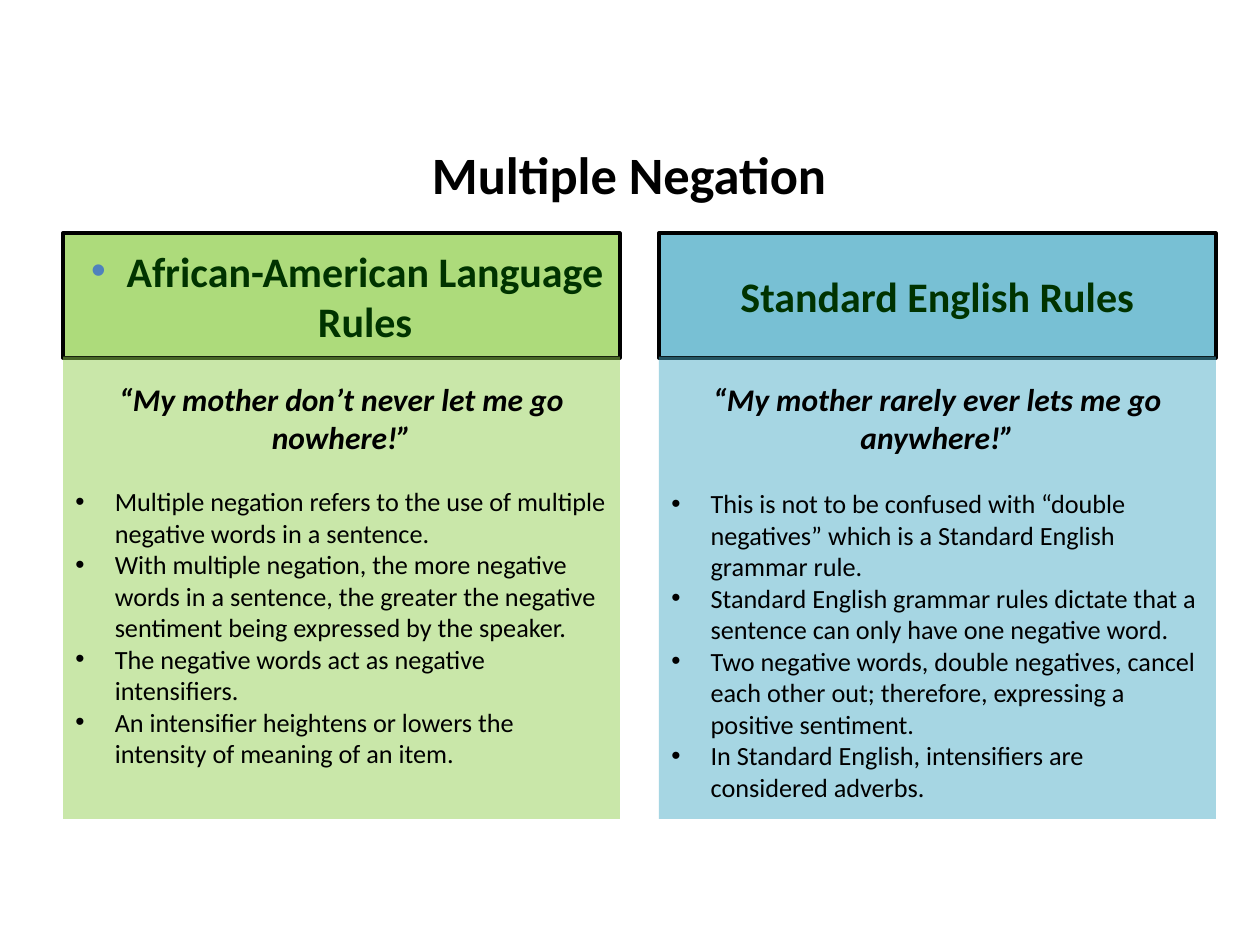
from dataclasses import dataclass

import pptx
import pptx.dml.color
import pptx.enum.shapes
import pptx.enum.text
import pptx.oxml.ns
import pptx.util
from lxml import etree

Pt = pptx.util.Pt
ALIGN = pptx.enum.text.PP_ALIGN
ANCHOR = pptx.enum.text.MSO_ANCHOR
qn = pptx.oxml.ns.qn

COLUMN_LEFT, COLUMN_STEP, COLUMN_WIDTH = 36, 340.5, 318.25
HEADER_TOP, HEADER_HEIGHT = 133.2, 71.3
BODY_TOP, BODY_HEIGHT = 203.8, 264.2


@dataclass
class Column:
    heading: str
    example: str
    rules: list[str]
    color: str
    rules_gap: float
    heading_bullet: bool = False


COLUMNS = [
    Column(
        "African-American Language Rules",
        "“My mother don’t never let me go nowhere!”",
        [
            "Multiple negation refers to the use of multiple negative words in a sentence.",
            "With multiple negation, the more negative words in a sentence, the greater "
            "the negative sentiment being expressed by the speaker.",
            "The negative words act as negative intensifiers.",
            "An intensifier heightens or lowers the intensity of meaning of an item.",
        ],
        "92D050", 17.1, heading_bullet=True,
    ),
    Column(
        "Standard English Rules",
        "“My mother rarely ever lets me go anywhere!”",
        [
            "This is not to be confused with “double negatives” which is a Standard "
            "English grammar rule.",
            "Standard English grammar rules dictate that a sentence can only have one "
            "negative word.",
            "Two negative words, double negatives, cancel each other out; therefore, "
            "expressing a positive sentiment.",
            "In Standard English, intensifiers are considered adverbs.",
        ],
        "4BACC6", 18.3,
    ),
]


def rgb(value: str) -> pptx.dml.color.RGBColor:
    return pptx.dml.color.RGBColor.from_string(value)


def add_bullet(para, color: str, margin: float, indent: float) -> None:
    properties = para._p.get_or_add_pPr()
    properties.set("marL", str(Pt(margin)))
    properties.set("indent", str(Pt(indent)))
    bullet_color = etree.SubElement(properties, qn("a:buClr"))
    etree.SubElement(bullet_color, qn("a:srgbClr"), val=color)
    etree.SubElement(properties, qn("a:buFont"), typeface="Arial")
    etree.SubElement(properties, qn("a:buChar"), char="•")


def style(para, size: float, color: str = "000000", bold: bool = False,
          italic: bool = False, align=ALIGN.CENTER) -> None:
    para.alignment = align
    font = para.font
    font.name, font.size, font.bold, font.italic = "Calibri", Pt(size), bold, italic
    font.color.rgb = rgb(color)


def add_panel(page, left: float, top: float, height: float, color: str, opacity: int):
    panel = page.shapes.add_shape(
        pptx.enum.shapes.MSO_SHAPE.RECTANGLE,
        Pt(left), Pt(top), Pt(COLUMN_WIDTH), Pt(height))
    panel.shadow.inherit = False
    panel.fill.solid()
    panel.fill.fore_color.rgb = rgb(color)
    fill_color = panel._element.spPr.find(qn("a:solidFill")).find(qn("a:srgbClr"))
    etree.SubElement(fill_color, qn("a:alpha"), val=str(opacity * 1000))
    panel.line.fill.background()
    panel.text_frame.word_wrap = True
    return panel


def add_column(page, column: Column, left: float) -> None:
    # Header
    header = add_panel(page, left, HEADER_TOP, HEADER_HEIGHT, column.color, 75)
    header.line.color.rgb = rgb("000000")
    header.line.width = Pt(2)
    header.text_frame.vertical_anchor = ANCHOR.MIDDLE
    para = header.text_frame.paragraphs[0]
    para.text = column.heading
    if column.heading_bullet:
        add_bullet(para, "4F81BD", 27, -20.25)
    style(para, 24, "003300", bold=True)

    # Example sentence
    frame = add_panel(page, left, BODY_TOP, BODY_HEIGHT, column.color, 49).text_frame
    frame.vertical_anchor = ANCHOR.TOP
    frame.margin_top = Pt(13.4)
    para = frame.paragraphs[0]
    para.text = column.example
    style(para, 18, bold=True, italic=True)
    para.space_after = Pt(column.rules_gap)

    # Rules
    for rule in column.rules:
        para = frame.add_paragraph()
        para.text = rule
        add_bullet(para, "000000", 22.5, -22.5)
        style(para, 15, align=ALIGN.LEFT)


def add_title(page, text: str) -> None:
    box = page.shapes.add_textbox(Pt(80.6), Pt(77.8), Pt(558), Pt(43.9))
    box.text_frame.word_wrap = True
    para = box.text_frame.paragraphs[0]
    para.text = text
    style(para, 30, bold=True)


def main() -> None:
    deck = pptx.Presentation()
    deck.slide_width, deck.slide_height = Pt(720), Pt(540)
    page = deck.slides.add_slide(deck.slide_layouts[6])
    for index, column in enumerate(COLUMNS):
        add_column(page, column, COLUMN_LEFT + index * COLUMN_STEP)
    add_title(page, "Multiple Negation")
    deck.save("out.pptx")


if __name__ == "__main__":
    main()
